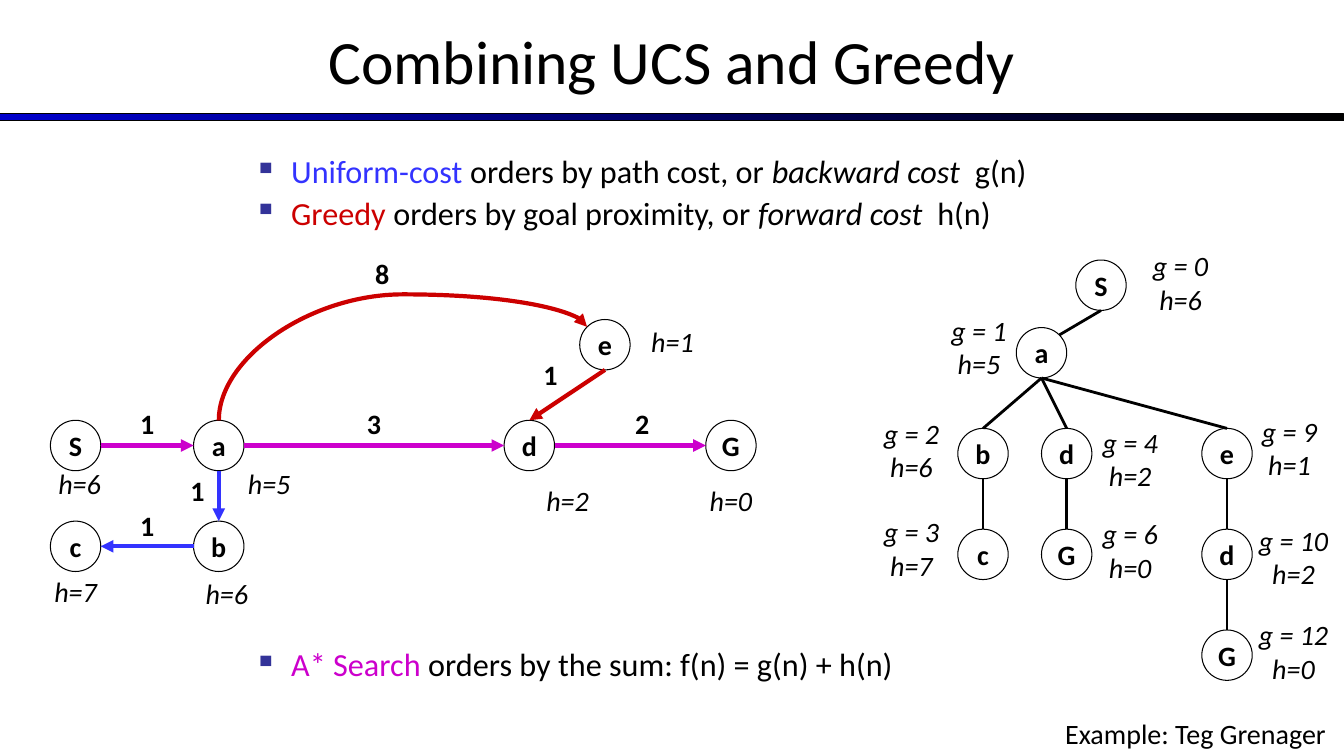
from dataclasses import dataclass

from lxml import etree
from pptx import Presentation
from pptx.dml.color import RGBColor
from pptx.enum.shapes import MSO_CONNECTOR, MSO_SHAPE
from pptx.enum.text import MSO_ANCHOR, PP_ALIGN
from pptx.oxml.ns import qn
from pptx.util import Inches, Pt

STRAIGHT, CURVE = MSO_CONNECTOR.STRAIGHT, MSO_CONNECTOR.CURVE
RECTANGLE, OVAL = MSO_SHAPE.RECTANGLE, MSO_SHAPE.OVAL
TOP, MIDDLE = MSO_ANCHOR.TOP, MSO_ANCHOR.MIDDLE
LEFT, CENTER, RIGHT = PP_ALIGN.LEFT, PP_ALIGN.CENTER, PP_ALIGN.RIGHT

NORTH, SOUTH, EAST, WEST = (0, -1), (0, 1), (1, 0), (-1, 0)
NORTHEAST, NORTHWEST = (0.71, -0.71), (-0.71, -0.71)
RADIUS = 0.25


@dataclass(frozen=True)
class Theme:
    font: str = "Calibri"
    black: str = "000000"
    white: str = "FFFFFF"
    bar: str = "0000CC"
    bullet: str = "333399"
    uniform: str = "3333FF"
    greedy: str = "CC0000"
    astar: str = "CC00CC"
    title_size: float = 44
    body_size: float = 23
    label_size: float = 20


@dataclass(frozen=True)
class Box:
    left: float
    top: float
    width: float
    height: float

    def inside(self, left, top, width, height):
        return Box(self.left + left, self.top + top, width, height)

    def lengths(self):
        return [Inches(n) for n in (self.left, self.top, self.width, self.height)]


THEME = Theme()

GRAPH_NODES = {
    "S": ((0.42, 1.92), "h=6", (0.46, 2.08)),
    "a": ((1.84, 1.92), "h=5", (2.34, 2.08)),
    "d": ((4.92, 1.92), "h=2", (5.3, 2.25)),
    "G": ((6.92, 1.92), "h=0", (6.92, 2.25)),
    "b": ((1.84, 2.92), "h=6", (1.92, 3.17)),
    "c": ((0.42, 2.92), "h=7", (0.42, 3.15)),
    "e": ((5.67, 0.92), "h=1", (6.34, 0.67)),
}
GRAPH_EDGES = [
    ("a", SOUTH, "b", NORTH, THEME.uniform, "1", (1.63, 2.15)),
    ("b", WEST, "c", EAST, THEME.uniform, "1", (1.13, 2.5)),
    ("e", SOUTH, "d", NORTH, THEME.greedy, "1", (5.13, 1)),
    ("a", NORTH, "e", NORTHWEST, THEME.greedy, "8", (3.46, 0)),
    ("d", EAST, "G", WEST, THEME.astar, "2", (6.04, 1.48)),
    ("S", EAST, "a", WEST, THEME.astar, "1", (1.13, 1.48)),
    ("a", EAST, "d", WEST, THEME.astar, "3", (3.38, 1.48)),
]
TREE_NODES = {
    "S": ((2.34, 0.41), ("g = 0", "h=6"), (3.13, 0)),
    "Sa": ((1.75, 1.08), ("g = 1", "h=5"), (1.13, 0.64)),
    "Sab": ((1.17, 2.08), ("g = 2", "h=6"), (0.46, 1.66)),
    "Sabc": ((1.17, 3.08), ("g = 3", "h=7"), (0.46, 2.64)),
    "Sad": ((2, 2.08), ("g = 4", "h=2"), (2.63, 1.75)),
    "SadG": ((2, 3.08), ("g = 6", "h=0"), (2.63, 2.66)),
    "Sae": ((3.59, 2.08), ("g = 9", "h=1"), (4.21, 1.64)),
    "Saed": ((3.59, 3.08), ("g = 10", "h=2"), (4.25, 2.72)),
    "SaedG": ((3.59, 4.08), ("g = 12", "h=0"), (4.25, 3.66)),
}


def add_run(paragraph, text, size, color=THEME.black, bold=False, italic=False):
    run = paragraph.add_run()
    run.text = text
    font = run.font
    font.name, font.size, font.bold, font.italic = THEME.font, Pt(size), bold, italic
    font.color.rgb = RGBColor.from_string(color)


def add_text_box(slide, box, align=LEFT, anchor=TOP):
    frame = slide.shapes.add_textbox(*box.lengths()).text_frame
    frame.word_wrap = True
    frame.vertical_anchor = anchor
    frame.paragraphs[0].alignment = align
    return frame


def add_label(slide, region, lines, position, **style):
    center, top = position
    box = region.inside(center - 0.5, top, 1, 0.1 + 0.33 * len(lines))
    paragraph = add_text_box(slide, box, CENTER).paragraphs[0]
    for index, line in enumerate(lines):
        if index:
            paragraph.add_line_break()
        add_run(paragraph, line, THEME.label_size, **style)


def add_node(slide, region, name, center):
    x, y = center
    box = region.inside(x - RADIUS, y - RADIUS, 2 * RADIUS, 2 * RADIUS)
    shape = slide.shapes.add_shape(OVAL, *box.lengths())
    shape.shadow.inherit = False
    shape.fill.solid()
    shape.fill.fore_color.rgb = RGBColor.from_string(THEME.white)
    shape.line.color.rgb = RGBColor.from_string(THEME.black)
    shape.line.width = Pt(0.75)
    frame = shape.text_frame
    frame.word_wrap = False
    frame.vertical_anchor = MIDDLE
    frame.paragraphs[0].alignment = CENTER
    add_run(frame.paragraphs[0], name, THEME.label_size, bold=True)


def rim_point(region, center, side):
    return (region.left + center[0] + RADIUS * side[0],
            region.top + center[1] + RADIUS * side[1])


def add_edge(slide, kind, start, end, color, width, arrow=False):
    connector = slide.shapes.add_connector(kind, *[Inches(n) for n in (*start, *end)])
    connector.line.color.rgb = RGBColor.from_string(color)
    connector.line.width = Pt(width)
    properties = connector._element.spPr
    etree.SubElement(properties, qn("a:effectLst"))
    if arrow:
        etree.SubElement(properties.find(qn("a:ln")), qn("a:tailEnd"), type="triangle")
    return connector


def add_arc(slide, start, end, color):
    middle_x, middle_y = (start[0] + end[0]) / 2, (start[1] + end[1]) / 2
    half_rise, half_run = (start[1] - end[1]) / 2, (end[0] - start[0]) / 2
    arc = add_edge(slide, CURVE, (middle_x - half_rise, middle_y - half_run),
                   (middle_x + half_rise, middle_y + half_run), color, 3, True)
    properties = arc._element.spPr
    properties.find(qn("a:xfrm")).set("rot", str(270 * 60000))
    adjustments = properties.find(qn("a:prstGeom")).find(qn("a:avLst"))
    etree.SubElement(adjustments, qn("a:gd"), name="adj1", fmla="val 134800")


def add_header(slide, box):
    frame = add_text_box(slide, box.inside(0, -0.03, box.width, 1.25), CENTER, MIDDLE)
    add_run(frame.paragraphs[0], "Combining UCS and Greedy", THEME.title_size)
    bar = slide.shapes.add_shape(RECTANGLE, *box.inside(0, 1.13, box.width, 0.07).lengths())
    bar.shadow.inherit = False
    bar.fill.gradient()
    bar.fill.gradient_angle = 0
    for stop, color in zip(bar.fill.gradient_stops, (THEME.bar, THEME.black)):
        stop.color.rgb = RGBColor.from_string(color)
    bar.line.color.rgb = RGBColor.from_string(THEME.black)
    bar.line.width = Pt(0.75)


def add_bullets(slide, box, items):
    frame = add_text_box(slide, box)
    for index, (term, color, *rest) in enumerate(items):
        paragraph = frame.add_paragraph() if index else frame.paragraphs[0]
        paragraph.line_spacing = 0.9
        paragraph.space_before = Pt(4.6)
        properties = paragraph._p.get_or_add_pPr()
        properties.set("marL", str(Inches(0.37)))
        properties.set("indent", str(Inches(-0.37)))
        bullet_color = etree.SubElement(properties, qn("a:buClr"))
        etree.SubElement(bullet_color, qn("a:srgbClr"), val=THEME.bullet)
        etree.SubElement(properties, qn("a:buChar"), char="▪")
        add_run(paragraph, term, THEME.body_size, color)
        for position, text in enumerate(rest):
            add_run(paragraph, text, THEME.body_size, italic=position == 1)


def add_graph(slide, box):
    for name, (center, heuristic, position) in GRAPH_NODES.items():
        add_node(slide, box, name, center)
        add_label(slide, box, [heuristic], position, italic=True)
    for source, leave, target, arrive, color, cost, position in GRAPH_EDGES:
        start = rim_point(box, GRAPH_NODES[source][0], leave)
        end = rim_point(box, GRAPH_NODES[target][0], arrive)
        if arrive == NORTHWEST:
            add_arc(slide, start, end, color)
        else:
            add_edge(slide, STRAIGHT, start, end, color, 3, True)
        add_label(slide, box, [cost], position, bold=True)


def add_tree(slide, box):
    for route, (center, lines, position) in TREE_NODES.items():
        add_node(slide, box, route[-1], center)
        add_label(slide, box, lines, position, italic=True)
        parent = route[:-1]
        if parent:
            start = rim_point(box, TREE_NODES[parent][0], SOUTH)
            end = rim_point(box, center, NORTHEAST if parent == "S" else NORTH)
            add_edge(slide, STRAIGHT, start, end, THEME.black, 2)


def add_credit(slide, box):
    paragraph = add_text_box(slide, box, RIGHT).paragraphs[0]
    add_run(paragraph, "Example: Teg Grenager", THEME.label_size)


def main():
    presentation = Presentation()
    presentation.slide_width, presentation.slide_height = Inches(13.33), Inches(7.5)
    slide = presentation.slides.add_slide(presentation.slide_layouts[6])
    add_header(slide, Box(0, 0, 13.33, 1.2))
    add_bullets(slide, Box(2.42, 1.5, 9, 0.9), [
        ("Uniform-cost ", THEME.uniform, "orders by path cost, or ", "backward cost  ", "g(n)"),
        ("Greedy ", THEME.greedy, "orders by goal proximity, or ", "forward cost  ", "h(n)"),
    ])
    add_graph(slide, Box(0.33, 2.5, 7.42, 3.6))
    add_tree(slide, Box(8.58, 2.42, 4.75, 4.43))
    add_bullets(slide, Box(2.42, 6.39, 7, 0.5), [
        ("A* Search", THEME.astar, " orders by the sum: f(n) = g(n) + h(n)"),
    ])
    add_credit(slide, Box(10.17, 7.06, 3.08, 0.44))
    presentation.save("out.pptx")


if __name__ == "__main__":
    main()
